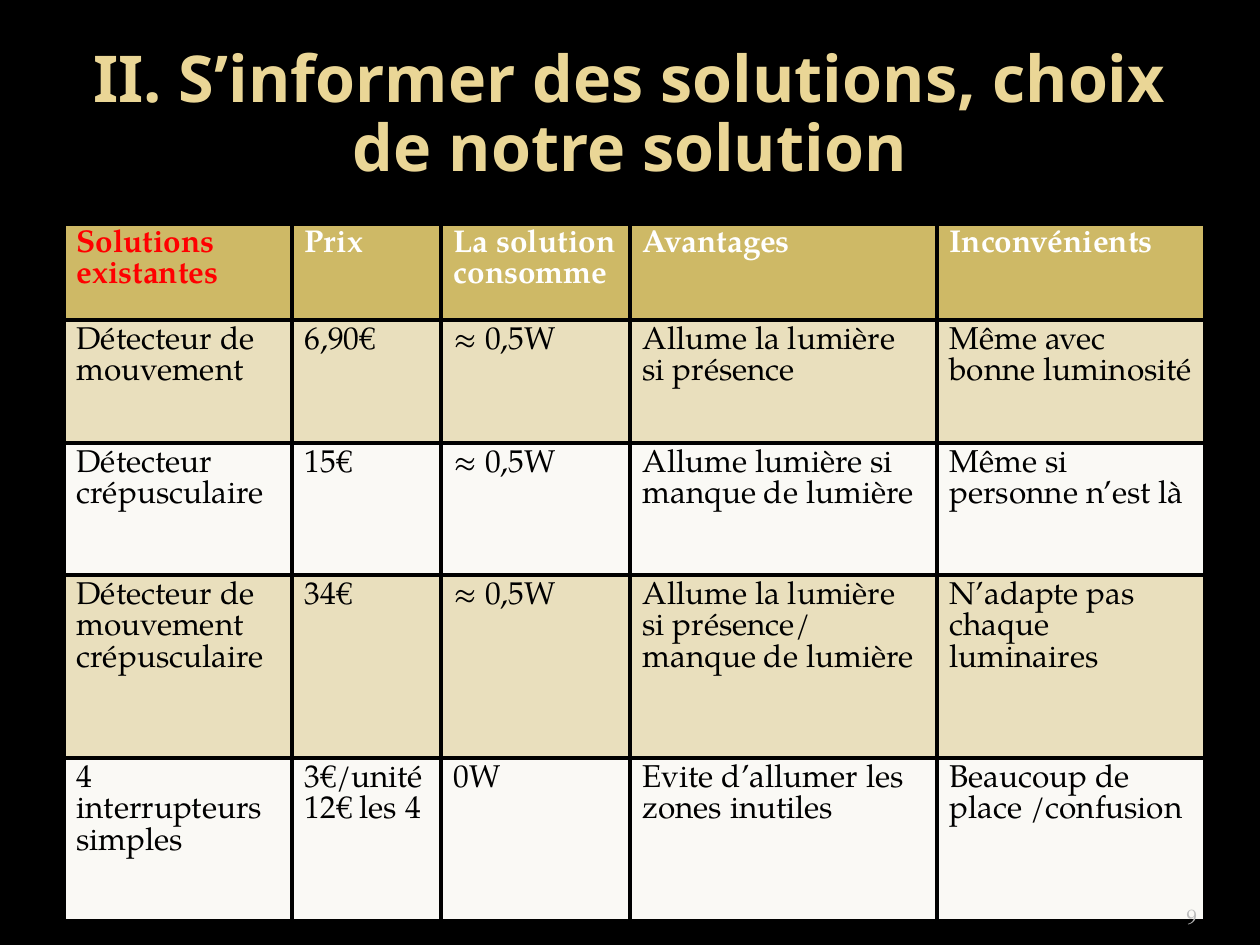
from lxml import etree
from pptx import Presentation
from pptx import util as u
from pptx.dml.color import RGBColor
from pptx.enum import text
from pptx.oxml import ns

PX = 914400 / 126
BLACK = RGBColor(0x00, 0x00, 0x00)
WHITE = RGBColor(0xFF, 0xFF, 0xFF)
RED = RGBColor(0xFF, 0x00, 0x00)
GOLD = RGBColor(0xCE, 0xB9, 0x66)
SAND = RGBColor(0xE9, 0xDF, 0xBD)
CREAM = RGBColor(0xFA, 0xF9, 0xF5)
STRAW = RGBColor(0xEA, 0xD6, 0x96)
GREY = RGBColor(0xBD, 0xBD, 0xBD)
SERIF = "TeX Gyre Pagella"
SANS = "Noto Sans"

COLS = [228, 149, 189, 307, 268]
ROWS = [96, 123, 132, 183, 163]
CELLS = [
    ["Solutions existantes", "Prix", "La solution consomme", "Avantages", "Inconvénients"],
    ["Détecteur de mouvement", "6,90€", "≈ 0,5W",
     "Allume la lumière si présence", "Même avec bonne luminosité"],
    ["Détecteur crépusculaire", "15€", "≈ 0,5W",
     "Allume lumière si manque de lumière", "Même si personne n’est là"],
    ["Détecteur de mouvement crépusculaire", "34€", "≈ 0,5W",
     "Allume la lumière si présence/ manque de lumière", "N’adapte pas chaque luminaires"],
    ["4 interrupteurs simples", "3€/unité\n12€ les 4", "0W",
     "Evite d’allumer les zones inutiles", "Beaucoup de place /confusion"],
]


def px(*vals):
    return [u.Emu(round(v * PX)) for v in vals]


def write(frame, words, size, face, hue, bold=False, align=None):
    for i, line in enumerate(words.split("\n")):
        para = frame.add_paragraph() if i else frame.paragraphs[0]
        para.alignment = align
        run = para.add_run()
        run.text = line
        run.font.size = u.Pt(size)
        run.font.name = face
        run.font.bold = bold
        run.font.color.rgb = hue


deck = Presentation()
deck.slide_width, deck.slide_height = px(1260, 945)
slide = deck.slides.add_slide(deck.slide_layouts[6])
slide.background.fill.solid()
slide.background.fill.fore_color.rgb = BLACK

grid = slide.shapes.add_table(len(ROWS), len(COLS), *px(64, 224, sum(COLS), sum(ROWS))).table
for col, wide in zip(grid.columns, px(*COLS)):
    col.width = wide
for row, high in zip(grid.rows, px(*ROWS)):
    row.height = high

for r, line in enumerate(CELLS):
    for c, words in enumerate(line):
        cell = grid.cell(r, c)
        cell.fill.solid()
        cell.fill.fore_color.rgb = GOLD if r == 0 else SAND if r % 2 else CREAM
        hue = BLACK if r else WHITE if c else RED
        write(cell.text_frame, words, 18, SERIF, hue, r == 0)
        props = cell._tc.get_or_add_tcPr()
        for i, side in enumerate(["lnL", "lnR", "lnT", "lnB"]):
            edge = etree.Element(ns.qn("a:" + side), w=str(u.Pt(2.25)))
            fill = etree.SubElement(edge, ns.qn("a:solidFill"))
            etree.SubElement(fill, ns.qn("a:srgbClr"), val=str(BLACK))
            props.insert(i, edge)

title = slide.shapes.add_textbox(*px(63, 38, 1134, 157)).text_frame
title.word_wrap = True
title.vertical_anchor = text.MSO_ANCHOR.MIDDLE
write(title, "II. S’informer des solutions, choix de notre solution",
      36.9, SANS, STRAW, True, text.PP_ALIGN.CENTER)
title.paragraphs[0].line_spacing = 0.89

page = slide.shapes.add_textbox(*px(1092, 885, 105, 50)).text_frame
page.word_wrap = True
page.vertical_anchor = text.MSO_ANCHOR.BOTTOM
page.margin_left = page.margin_right = 0
write(page, "9", 12, SERIF, GREY, align=text.PP_ALIGN.RIGHT)

deck.save("out.pptx")
